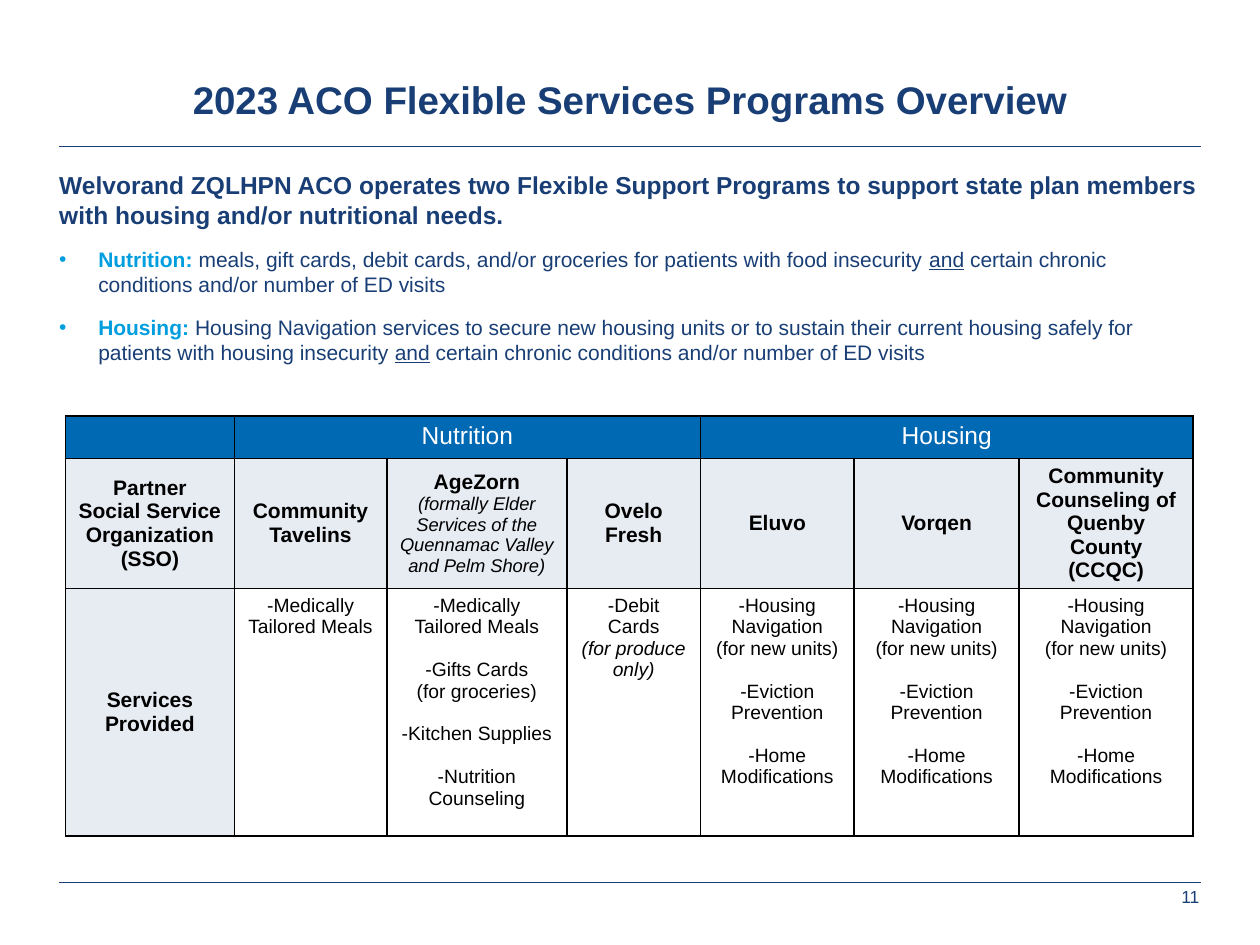
from typing import NamedTuple

from lxml.etree import SubElement as Sub
from pptx import Presentation
from pptx.dml.color import RGBColor as Rgb
from pptx.enum.shapes import MSO_CONNECTOR as Conn
from pptx.enum.text import MSO_ANCHOR as Anchor, MSO_AUTO_SIZE as Auto, PP_ALIGN as Align
from pptx.oxml.ns import qn
from pptx.util import Inches, Pt

WIDE, HIGH = Inches(10), Inches(7.5)
HUES = {
    "navy": "183E75", "cyan": "009EDF", "blue": "0069B4",
    "pale": "E7EBF2", "white": "FFFFFF", "black": "000000",
}
COLS = [13.4, 12.1, 14.3, 10.6, 12.2, 13.1, 13.8]
ROWS = [4.4, 13.07, 26.2]
GAP = 12.3


class Box(NamedTuple):
    left: float
    top: float
    width: float
    height: float


class Run(NamedTuple):
    text: str
    size: float
    hue: str = "black"
    bold: bool = False
    italic: bool = False
    under: bool = False


class Para(NamedTuple):
    runs: list[Run]
    align: Align = Align.CENTER
    before: float = 0
    after: float = 0
    dot: bool = False


class Cell(NamedTuple):
    row: int
    col: int
    paras: list[Para]
    fill: str
    span: int = 1
    mid: bool = True


def across(share: float) -> int:
    return round(WIDE * share / 100)


def down(share: float) -> int:
    return round(HIGH * share / 100)


def place(box: Box) -> tuple[int, int, int, int]:
    return across(box.left), down(box.top), across(box.width), down(box.height)


def apply(thing, values: dict) -> None:
    for key, value in values.items():
        setattr(thing, key, value)


def mark(par, dot: bool) -> None:
    props = par._p.get_or_add_pPr()
    props.set("marL", str(Inches(0.31) if dot else 0))
    props.set("indent", str(-Inches(0.31) if dot else 0))
    if dot:
        hue = Sub(props, qn("a:buClr"))
        Sub(hue, qn("a:srgbClr"), val=HUES["cyan"])
        Sub(props, qn("a:buFont"), typeface="Arial")
        Sub(props, qn("a:buChar"), char="•")
    else:
        Sub(props, qn("a:buNone"))


def write(frame, paras: list[Para]) -> None:
    for num, para in enumerate(paras):
        par = frame.add_paragraph() if num else frame.paragraphs[0]
        mark(par, para.dot)
        apply(par, {
            "alignment": para.align, "line_spacing": 1.0,
            "space_before": Pt(para.before), "space_after": Pt(para.after),
        })
        for run in para.runs:
            part = par.add_run()
            part.text = run.text
            apply(part.font, {
                "name": "Arial", "size": Pt(run.size), "bold": run.bold,
                "italic": run.italic, "underline": run.under,
            })
            part.font.color.rgb = Rgb.from_string(HUES[run.hue])


def fill_box(shape, box: Box, paras: list[Para]) -> None:
    apply(shape, dict(zip(("left", "top", "width", "height"), place(box))))
    apply(shape.text_frame, {
        "margin_left": 0, "margin_right": 0, "margin_top": 0, "margin_bottom": 0,
        "word_wrap": True, "auto_size": Auto.NONE, "vertical_anchor": Anchor.TOP,
    })
    write(shape.text_frame, paras)


def rule(slide, top: float) -> None:
    line = slide.shapes.add_connector(
        Conn.STRAIGHT, across(4.7), down(top), across(95.3), down(top))
    line.line.width = Pt(0.75)
    line.line.color.rgb = Rgb.from_string(HUES["navy"])
    Sub(line._element.spPr, qn("a:effectLst"))


def edge(cell) -> None:
    props = cell._tc.get_or_add_tcPr()
    for side in ("lnL", "lnR", "lnT", "lnB"):
        line = Sub(props, qn(f"a:{side}"), w=str(Pt(1)))
        Sub(Sub(line, qn("a:solidFill")), qn("a:srgbClr"), val=HUES["black"])


def bold(text: str) -> Para:
    return Para([Run(text, 12, bold=True)])


def item(text: str, gap: float = 0, italic: bool = False) -> Para:
    return Para([Run(text, 11, italic=italic)], before=gap)


def point(name: str, text: str) -> Para:
    return Para([
        Run(f"{name}: ", 12, "cyan", bold=True), Run(text, 12, "navy"),
        Run("and", 12, "navy", under=True),
        Run(" certain chronic conditions and/or number of ED visits", 12, "navy"),
    ], Align.LEFT, after=10, dot=True)


def cells() -> list[Cell]:
    heads = [Cell(0, col, [Para([Run(text, 14, "white")])], "blue", 3, False)
             for col, text in ((1, "Nutrition"), (4, "Housing"))]
    small = Para([Run("(formally Elder Services of the Quennamac Valley and Pelm Shore)",
                      10.5, italic=True)])
    names = [
        [bold("Partner"), bold("Social Service Organization (SSO)")],
        [bold("Community Tavelins")], [bold("AgeZorn"), small], [bold("Ovelo Fresh")],
        [bold("Eluvo")], [bold("Vorqen")],
        [bold("Community Counseling of Quenby County (CCQC)")],
    ]
    home = [item("-Housing Navigation"), item("(for new units)"),
            item("-Eviction Prevention", GAP), item("-Home Modifications", GAP)]
    work = [
        [item("-Medically Tailored Meals")],
        [item("-Medically Tailored Meals"), item("-Gifts Cards", GAP),
         item("(for groceries)"), item("-Kitchen Supplies", GAP),
         item("-Nutrition Counseling", GAP)],
        [item("-Debit Cards"), item("(for produce only)", italic=True)],
        home, home, home,
    ]
    return [
        Cell(0, 0, [], "blue"), *heads,
        *(Cell(1, col, paras, "pale") for col, paras in enumerate(names)),
        Cell(2, 0, [bold("Services Provided")], "pale"),
        *(Cell(2, col, paras, "white", mid=False) for col, paras in enumerate(work, 1)),
    ]


def draw_grid(slide, box: Box) -> None:
    grid = slide.shapes.add_table(len(ROWS), len(COLS), *place(box)).table
    apply(grid, {"first_row": False, "horz_banding": False})
    for col, share in zip(grid.columns, COLS):
        col.width = across(share)
    for row, share in zip(grid.rows, ROWS):
        row.height = down(share)
    for cell in grid.iter_cells():
        edge(cell)
    for spot in cells():
        cell = grid.cell(spot.row, spot.col)
        if spot.span > 1:
            cell.merge(grid.cell(spot.row, spot.col + spot.span - 1))
        cell.fill.solid()
        cell.fill.fore_color.rgb = Rgb.from_string(HUES[spot.fill])
        cell.vertical_anchor = Anchor.MIDDLE if spot.mid else Anchor.TOP
        write(cell.text_frame, spot.paras)
    for cell in grid.iter_cells():
        if not cell.text:
            Sub(cell.text_frame.paragraphs[0]._p, qn("a:endParaRPr"), sz="1400")


def main() -> None:
    deck = Presentation()
    apply(deck, {"slide_width": WIDE, "slide_height": HIGH})
    slide = deck.slides.add_slide(deck.slide_layouts[1])
    title, body = slide.placeholders
    rule(slide, 15.5)
    rule(slide, 93.4)
    fill_box(title, Box(4.7, 8, 90.6, 10), [
        Para([Run("2023 ACO Flexible Services Programs Overview", 22, "navy", True)])])
    fill_box(body, Box(4.7, 18, 90.6, 26), [
        Para([Run("Welvorand ZQLHPN ACO operates two Flexible Support Programs to support "
                  "state plan members with housing and/or nutritional needs.",
                  14, "navy", True)], Align.LEFT, after=10),
        point("Nutrition", "meals, gift cards, debit cards, and/or groceries for patients "
              "with food insecurity "),
        point("Housing", "Housing Navigation services to secure new housing units or to "
              "sustain their current housing safely for patients with housing insecurity "),
    ])
    page = Box(85.6, 93.8, 9.6, 3.5)
    fill_box(slide.shapes.add_textbox(*place(page)), page,
             [Para([Run("11", 10, "navy")], Align.RIGHT)])
    draw_grid(slide, Box(5.2, 44, sum(COLS), sum(ROWS)))
    deck.save("out.pptx")


if __name__ == "__main__":
    main()
